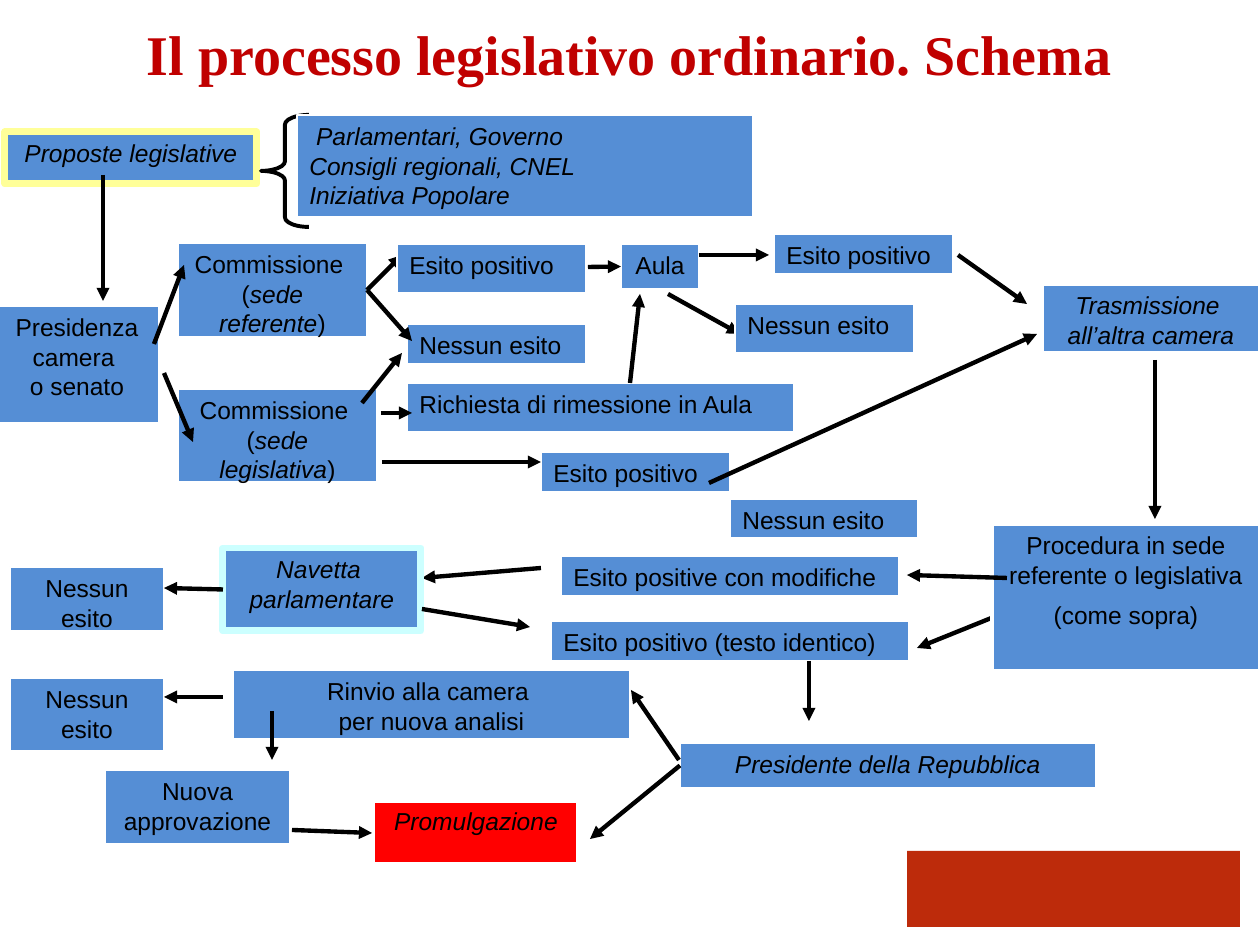
from dataclasses import dataclass

from lxml.etree import SubElement
from pptx import Presentation
from pptx.dml.color import RGBColor
from pptx.enum.shapes import MSO_CONNECTOR, MSO_SHAPE
from pptx.enum.text import MSO_ANCHOR, PP_ALIGN
from pptx.oxml.ns import qn
from pptx.util import Emu, Pt

PX_PER_INCH = 126
TOP, LEFT, BOTTOM, RIGHT = range(4)


def px(n):
    return Emu(round(n * 914400 / PX_PER_INCH))


@dataclass(frozen=True)
class Theme:
    blue: str = "558ED5"
    red: str = "FF0000"
    footer: str = "BD2B0B"
    title: str = "C00000"
    ink: str = "000000"
    white: str = "FFFFFF"
    yellow: str = "FFFF99"
    cyan: str = "CCFFFF"
    title_font: str = "Times New Roman"
    body_font: str = "Arial"
    title_size: int = 32
    body_size: int = 14
    thin: float = 0.75
    medium: float = 1.75
    brace: float = 2.25
    arrow: float = 2.5
    thick: float = 4


class Diagram:
    def __init__(self, slide, theme):
        self.slide, self.theme = slide, theme

    def title(self, text, x, y, w, h):
        t = self.theme
        tf = self.slide.shapes.add_textbox(px(x), px(y), px(w), px(h)).text_frame
        tf.word_wrap = True
        tf.margin_top = px(13)
        tf.text = text
        p = tf.paragraphs[0]
        p.alignment = PP_ALIGN.CENTER
        font = p.runs[0].font
        font.name, font.size, font.bold = t.title_font, Pt(t.title_size), True
        font.color.rgb = RGBColor.from_string(t.title)

    def shape(self, kind, x, y, w, h, fill=None, line=None, width=0.75):
        s = self.slide.shapes.add_shape(kind, px(x), px(y), px(w), px(h))
        s.shadow.inherit = False
        if fill:
            s.fill.solid()
            s.fill.fore_color.rgb = RGBColor.from_string(fill)
        else:
            s.fill.background()
        if line:
            s.line.color.rgb = RGBColor.from_string(line)
            s.line.width = Pt(width)
        else:
            s.line.fill.background()
        return s

    def box(self, text, x, y, w, h, align=PP_ALIGN.CENTER, fill=None,
            line=None, width=None, space_after=0):
        """Filled box; each line is a paragraph, *asterisks* mark italics."""
        t = self.theme
        s = self.shape(MSO_SHAPE.RECTANGLE, x, y, w, h, fill or t.blue,
                       line or t.white, width or t.thin)
        tf = s.text_frame
        tf.word_wrap = True
        tf.vertical_anchor = MSO_ANCHOR.TOP
        for i, content in enumerate(text.split("\n")):
            p = tf.add_paragraph() if i else tf.paragraphs[0]
            p.alignment = align
            p.space_after = Pt(space_after)
            for j, part in enumerate(content.split("*")):
                if part:
                    r = p.add_run()
                    r.text = part
                    r.font.name, r.font.size = t.body_font, Pt(t.body_size)
                    r.font.italic = j % 2 == 1
                    r.font.color.rgb = RGBColor.from_string(t.ink)
        return s

    def label(self, text, *bounds):
        """Box with left-aligned text."""
        return self.box(text, *bounds, align=PP_ALIGN.LEFT)

    def brace(self, x, y, w, h):
        s = self.shape(MSO_SHAPE.LEFT_BRACE, x, y, w, h,
                       line=self.theme.ink, width=self.theme.brace)
        s.adjustments[0] = 0.2

    def arrow(self, x1, y1, x2, y2, begin=None, end=None):
        """Arrow to (x2, y2); begin and end are optional (box, side) joins."""
        c = self.slide.shapes.add_connector(
            MSO_CONNECTOR.STRAIGHT, px(x1), px(y1), px(x2), px(y2))
        c.line.color.rgb = RGBColor.from_string(self.theme.ink)
        c.line.width = Pt(self.theme.arrow)
        SubElement(c.line._get_or_add_ln(), qn("a:tailEnd"), type="triangle")
        SubElement(c._element.spPr, qn("a:effectLst"))
        if begin:
            c.begin_connect(*begin)
        if end:
            c.end_connect(*end)


def main():
    prs = Presentation()
    prs.slide_width, prs.slide_height = px(1260), px(945)
    t = Theme()
    d = Diagram(prs.slides.add_slide(prs.slide_layouts[6]), t)

    d.shape(MSO_SHAPE.RECTANGLE, 907, 851, 333, 76, t.footer)
    d.title("Il processo legislativo ordinario. Schema", 0, 6, 1260, 59)

    # Proposal and first chamber
    d.box("*Proposte legislative*", 5, 132, 252, 52, line=t.yellow, width=t.thick)
    d.brace(261, 115, 48, 112)
    d.label("* Parlamentari, Governo*\n*Consigli regionali, CNEL*\n*Iniziativa Popolare*",
            297, 115, 456, 102)
    d.box("Presidenza camera \no senato", -5, 306, 164, 117)
    referente = d.box("Commissione \n(*sede referente*)", 178, 243, 189, 94)
    d.box("Commissione \n(*sede legislativa*)", 178, 389, 199, 93)

    # Arrows whose ends are covered by the boxes that follow
    d.arrow(364, 290, 402, 255, begin=(referente, RIGHT))
    d.arrow(668, 294, 740, 334)
    d.arrow(541, 568, 422, 578)
    d.arrow(1036, 600, 917, 648)

    d.label("Richiesta di rimessione in Aula", 407, 383, 387, 49)
    d.label("Nessun esito", 407, 324, 179, 40)
    d.label("Esito positivo", 541, 452, 189, 40)
    d.label("Esito positivo", 397, 244, 189, 49)
    aula = d.box("Aula", 621, 244, 78, 45)
    d.label("Nessun esito", 735, 304, 179, 49)
    d.label("Esito positivo", 774, 234, 179, 40)

    # Second chamber
    d.box("*Trasmissione *\n*all’altra camera*", 1042, 284, 218, 69, width=t.medium)
    d.label("Nessun esito", 730, 499, 188, 39)
    d.box("Procedura in sede referente o legislativa\n(come sopra)",
          992, 524, 268, 147, width=t.medium, space_after=6)
    d.label("Esito positive con modifiche", 561, 556, 338, 40)
    d.label("Esito positivo (testo identico)", 551, 621, 358, 40)
    navetta = d.box("*Navetta *\n*parlamentare*", 223, 548, 198, 83,
                    line=t.cyan, width=t.thick)
    d.box("Nessun esito", 10, 567, 154, 64)

    # President and promulgation
    presidente = d.box("*Presidente della Repubblica*", 680, 743, 416, 45)
    d.box("Rinvio alla camera \nper nuova analisi", 233, 670, 397, 69)
    d.box("Nessun esito", 10, 678, 154, 73)
    d.box("Nuova approvazione", 105, 770, 185, 74)
    promulgazione = d.box("*Promulgazione*", 372, 800, 208, 66,
                          fill=t.red, width=t.thick)

    for ends in (
        (103, 175, 103, 301),    # proposal to presidency
        (154, 344, 184, 265),    # presidency to the two committees
        (164, 373, 193, 442),
        (362, 403, 402, 353),    # legislative committee to its outcomes
        (381, 413, 412, 413),
        (382, 462, 541, 462),
        (630, 383, 640, 294),    # request to chamber
        (699, 255, 769, 255),    # chamber to positive outcome
        (958, 255, 1027, 304),   # positive outcomes to other chamber
        (709, 483, 1037, 334),
        (1155, 360, 1155, 519),  # other chamber to its procedure
        (1007, 578, 907, 575),   # procedure to amended text
        (422, 609, 530, 627),    # shuttle to identical text
        (809, 661, 809, 721),    # identical text to president
        (679, 760, 631, 690),    # president to referral
        (223, 697, 164, 697),    # referral to its outcomes
        (272, 711, 272, 760),
    ):
        d.arrow(*ends)
    d.arrow(364, 294, 412, 341, begin=(referente, RIGHT))
    d.arrow(588, 267, 621, 266, end=(aula, LEFT))
    d.arrow(223, 588, 164, 588, begin=(navetta, LEFT))
    d.arrow(680, 770, 590, 839, begin=(presidente, LEFT))
    d.arrow(292, 830, 372, 830, end=(promulgazione, LEFT))

    prs.save("out.pptx")


if __name__ == "__main__":
    main()
